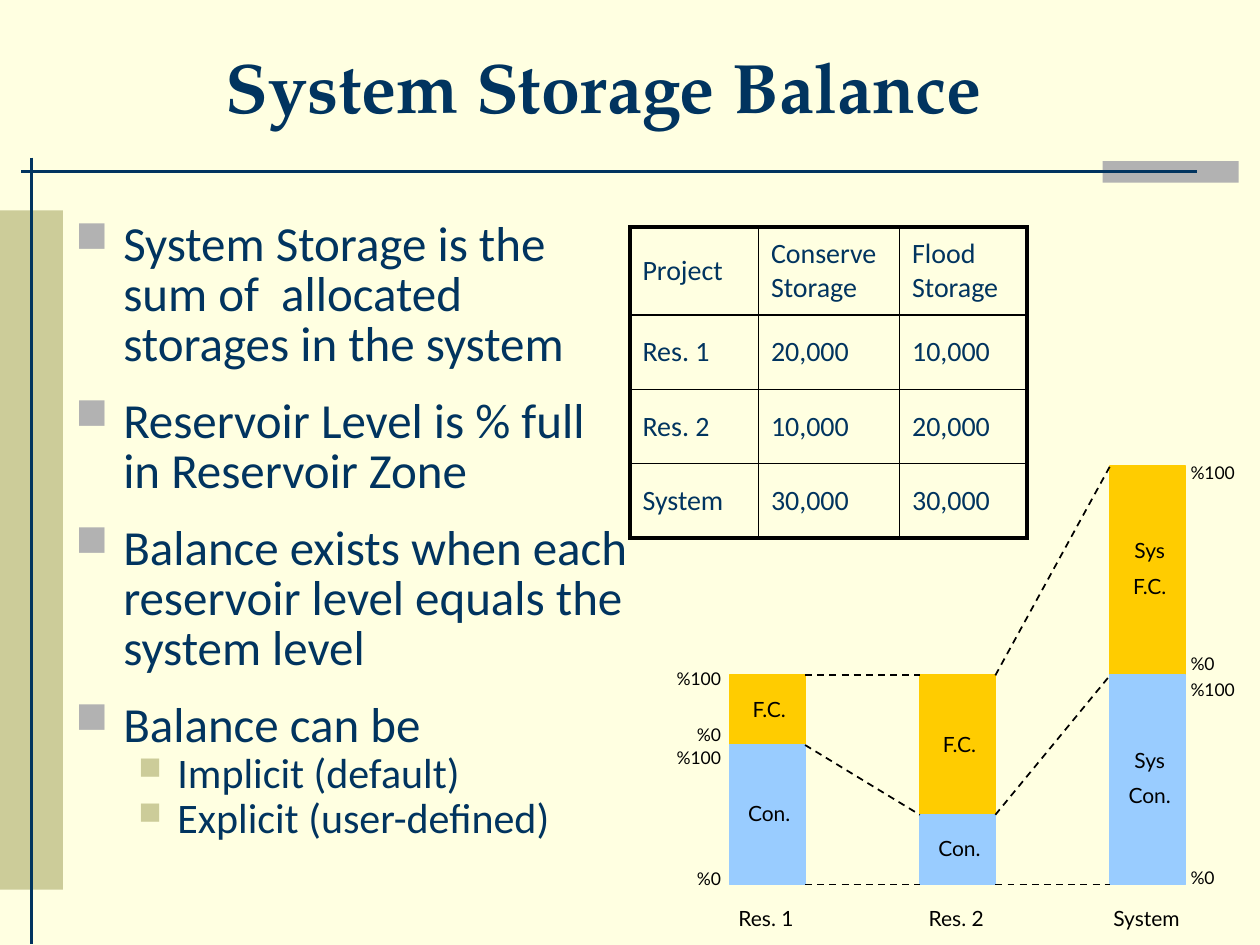
from dataclasses import dataclass

from lxml import etree
from pptx import Presentation
from pptx.dml.color import RGBColor
from pptx.enum import dml, shapes, text
from pptx.oxml import ns
from pptx.util import Inches, Pt

COLORS = {
    "cream": "FFFFE1", "navy": "01345F", "gray": "B2B2B2", "olive": "CCCC99",
    "flood": "FFCC00", "conserve": "99CCFF", "black": "000000",
}
LEFT, CENTER, RIGHT = text.PP_ALIGN.LEFT, text.PP_ALIGN.CENTER, text.PP_ALIGN.RIGHT


@dataclass
class Bullet:
    text: str
    level: int = 0


@dataclass
class Reservoir:
    name: str
    conserve: int
    flood: int
    left: float
    prefix: str = ""


BULLETS = [
    Bullet("System Storage is the sum of  allocated storages in the system"),
    Bullet("Reservoir Level is % full in Reservoir Zone"),
    Bullet("Balance exists when each reservoir level equals the system level"),
    Bullet("Balance can be"),
    Bullet("Implicit (default)", 1),
    Bullet("Explicit (user-defined)", 1),
]
RESERVOIRS = [
    Reservoir("Res. 1", 20000, 10000, 5.79),
    Reservoir("Res. 2", 10000, 20000, 7.3),
    Reservoir("System", 30000, 30000, 8.81, "Sys"),
]
BAR_WIDTH, BAR_BASE = 0.6, 7.02
INCHES_PER_UNIT = 1.66 / 30000


def rgb(name: str) -> RGBColor:
    return RGBColor.from_string(COLORS[name])


def add_xml(parent, tag: str, **attributes):
    return etree.SubElement(parent, ns.qn(tag), **attributes)


def write(paragraph, words: str, size=12, font="Lato", color="black", bold=False,
          align=LEFT, before=0.0, spacing=None) -> None:
    paragraph.alignment = align
    paragraph.space_before = Pt(before)
    if spacing:
        paragraph.line_spacing = spacing
    run = paragraph.add_run()
    run.text = words
    run.font.size, run.font.name, run.font.bold = Pt(size), font, bold
    run.font.color.rgb = rgb(color)


def add_box(slide, left: float, top: float, width: float, height: float):
    frame = slide.shapes.add_textbox(
        Inches(left), Inches(top), Inches(width), Inches(height)).text_frame
    frame.word_wrap = True
    return frame


def add_label(slide, lines: list[str], left: float, top: float, width: float,
              size=12, align=CENTER) -> None:
    frame = add_box(slide, left, top, width, 0.3 * len(lines))
    for i, line in enumerate(lines):
        paragraph = frame.add_paragraph() if i else frame.paragraphs[0]
        write(paragraph, line, size=size, align=align, before=size / 2 if i else 0)


def add_block(slide, left: float, top: float, width: float, height: float,
              color: str, outlined=False) -> None:
    block = slide.shapes.add_shape(shapes.MSO_SHAPE.RECTANGLE, Inches(left),
                                   Inches(top), Inches(width), Inches(height))
    block.shadow.inherit = False
    block.fill.solid()
    block.fill.fore_color.rgb = rgb(color)
    if outlined:
        block.line.color.rgb = rgb(color)
        block.line.width = Pt(1)
    else:
        block.line.fill.background()


def add_line(slide, x1: float, y1: float, x2: float, y2: float,
             color="black", width=1.0, dashed=True) -> None:
    line = slide.shapes.add_connector(shapes.MSO_CONNECTOR.STRAIGHT, Inches(x1),
                                      Inches(y1), Inches(x2), Inches(y2))
    line.line.color.rgb = rgb(color)
    line.line.width = Pt(width)
    if dashed:
        line.line.dash_style = dml.MSO_LINE.DASH
    add_xml(line._element.spPr, "a:effectLst")


def add_bullets(slide) -> None:
    frame = add_box(slide, 0.5, 1.71, 4.58, 4.96)
    for i, bullet in enumerate(BULLETS):
        paragraph = frame.add_paragraph() if i else frame.paragraphs[0]
        margin, hang, size, share, color, gap = (
            (0.81, 0.31, 24, 75, "olive", 1.2) if bullet.level
            else (0.38, 0.38, 28, 90, "gray", 15.4))
        paragraph.level = bullet.level
        properties = paragraph._p.get_or_add_pPr()
        properties.set("marL", str(Inches(margin)))
        properties.set("indent", str(-Inches(hang)))
        add_xml(add_xml(properties, "a:buClr"), "a:srgbClr", val=COLORS[color])
        add_xml(properties, "a:buSzPct", val=str(share * 1000))
        add_xml(properties, "a:buChar", char="■")
        write(paragraph, bullet.text, size=size, font="Calibri", color="navy",
              before=gap if i else 0, spacing=0.85)


def set_borders(cell, widths: dict[str, float]) -> None:
    properties = cell._tc.get_or_add_tcPr()
    for i, (side, width) in enumerate(widths.items()):
        border = etree.Element(ns.qn(f"a:{side}"), w=str(Pt(width)))
        add_xml(add_xml(border, "a:solidFill"), "a:srgbClr", val=COLORS["black"])
        properties.insert(i, border)


def add_storage_table(slide) -> None:
    rows = [["Project", "Conserve Storage", "Flood Storage"]] + [
        [r.name, f"{r.conserve:,}", f"{r.flood:,}"] for r in RESERVOIRS]
    table = slide.shapes.add_table(4, 3, Inches(5), Inches(1.8),
                                   Inches(3.15), Inches(2.47)).table
    table.first_row = table.horz_banding = False
    for column, width in zip(table.columns, (1.02, 1.12, 1.01)):
        column.width = Inches(width)
    for i, row in enumerate(rows):
        table.rows[i].height = Inches(0.59 if i else 0.7)
        for j, words in enumerate(row):
            cell = table.cell(i, j)
            cell.fill.background()
            cell.vertical_anchor = text.MSO_ANCHOR.MIDDLE
            write(cell.text_frame.paragraphs[0], words, size=16, font="Calibri",
                  color="navy")
            outer = {"lnL": j == 0, "lnR": j == 2, "lnT": i == 0, "lnB": i == 3}
            set_borders(cell, {side: 2.25 if edge else 1 for side, edge in outer.items()})


def levels(reservoir: Reservoir) -> list[float]:
    """Heights on the slide of the top, the zone boundary and the bottom."""
    boundary = BAR_BASE - reservoir.conserve * INCHES_PER_UNIT
    return [boundary - reservoir.flood * INCHES_PER_UNIT, boundary, BAR_BASE]


def add_storage_bars(slide) -> None:
    for r in RESERVOIRS:
        top, boundary, base = levels(r)
        zones = [("F.C.", "flood", top, boundary), ("Con.", "conserve", boundary, base)]
        for zone, color, upper, lower in zones:
            add_block(slide, r.left, upper, BAR_WIDTH, lower - upper, color, outlined=True)
            lines = [r.prefix, zone] if r.prefix else [zone]
            add_label(slide, lines, r.left + 0.03,
                      (upper + lower) / 2 - 0.15 * len(lines) - 0.01, 0.57)
        add_label(slide, [r.name], r.left - 0.09, 7.14, 0.76)

    # Dashed lines join equal levels of neighbouring bars
    for near, far in zip(RESERVOIRS, RESERVOIRS[1:]):
        for y1, y2 in zip(levels(near), levels(far)):
            add_line(slide, near.left + BAR_WIDTH, y1, far.left, y2)

    # Percent scales beside the first and last bars
    for left, width, align, tops in (
            (5.06, 0.76, RIGHT, (5.25, 5.7, 5.88, 6.84)),
            (9.35, 0.65, LEFT, (3.62, 5.13, 5.34, 6.83))):
        for percent, top in zip(("%100", "%0") * 2, tops):
            add_label(slide, [percent], left, top, width, size=10, align=align)


def main() -> None:
    deck = Presentation()
    deck.slide_width, deck.slide_height = Inches(10), Inches(7.5)
    slide = deck.slides.add_slide(deck.slide_layouts[5])
    slide.background.fill.solid()
    slide.background.fill.fore_color.rgb = rgb("cream")

    # Frame decoration
    add_block(slide, 8.75, 1.28, 1.08, 0.17, "gray")
    add_line(slide, 0.17, 1.36, 9.5, 1.36, "navy", 1.5, dashed=False)
    add_block(slide, 0, 1.67, 0.5, 5.39, "olive")
    add_line(slide, 0.25, 1.25, 0.25, 7.49, "navy", 1.5, dashed=False)

    # Title
    title = slide.shapes.title
    title.left, title.top = Inches(1.69), Inches(0.08)
    title.width, title.height = Inches(8.07), Inches(1.19)
    title.text_frame.vertical_anchor = text.MSO_ANCHOR.MIDDLE
    write(title.text_frame.paragraphs[0], "System Storage Balance", size=40,
          font="TeX Gyre Pagella", color="navy", bold=True)

    # Content
    add_bullets(slide)
    add_storage_table(slide)
    add_storage_bars(slide)
    deck.save("out.pptx")


if __name__ == "__main__":
    main()
